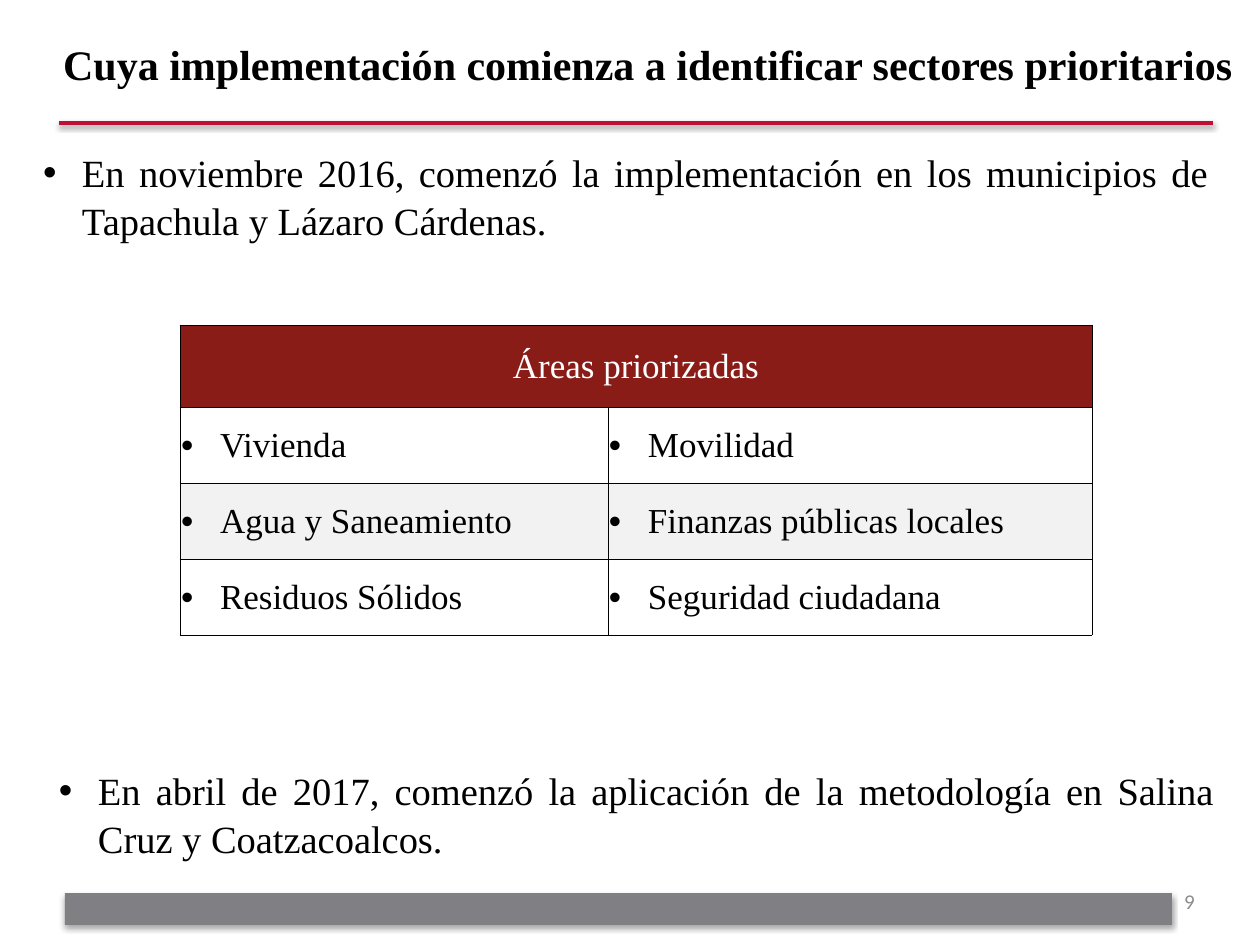
from lxml import etree
from pptx import Presentation
from pptx import util as u
from pptx.dml.color import RGBColor
from pptx.enum import shapes, text
from pptx.oxml import parse_xml
from pptx.oxml.ns import nsdecls, qn

PX = 914400 / 126
C = {"black": "000000", "white": "FFFFFF", "red": "BE0F34", "maroon": "8A1C18",
     "band": "F2F2F2", "gray": "807F83", "number": "8C8C8C"}
SERIF = "Times New Roman"
AL = text.PP_ALIGN


def px(*values):
    return [u.Emu(round(v * PX)) for v in values]


def write(tf, words, size, align, font=SERIF, color="black", bold=False, bullet=False):
    p = tf.paragraphs[0]
    p.alignment = align
    r = p.add_run()
    r.text = words
    for key, value in {"name": font, "size": u.Pt(size), "bold": bold}.items():
        setattr(r.font, key, value)
    r.font.color.rgb = RGBColor.from_string(C[color])
    if bullet:
        pPr = p._p.get_or_add_pPr()
        indent = px(39)[0]
        pPr.set("marL", str(indent))
        pPr.set("indent", str(-indent))
        etree.SubElement(pPr, qn("a:buFont")).set("typeface", "Arial")
        etree.SubElement(pPr, qn("a:buChar")).set("char", "•")
    return p


prs = Presentation()
prs.slide_width, prs.slide_height = px(1260, 945)
s = prs.slides.add_slide(prs.slide_layouts[6])

bullets = [
    ((43, 147, 1165, 571), "En noviembre 2016, comenzó la implementación en los municipios de Tapachula y Lázaro Cárdenas."),
    ((59, 765, 1155, 67), "En abril de 2017, comenzó la aplicación de la metodología en Salina Cruz y Coatzacoalcos."),
]
for box, words in bullets:
    tf = s.shapes.add_textbox(*px(*box)).text_frame
    tf.word_wrap = True
    for side in ("left", "top", "right", "bottom"):
        setattr(tf, f"margin_{side}", 0)
    p = write(tf, words, 22, AL.JUSTIFY, bullet=True)
    p.line_spacing = 1.04
    p.space_before = u.Pt(2)

rule = s.shapes.add_connector(shapes.MSO_CONNECTOR.STRAIGHT, *px(59, 123, 1213, 123))
rule.line.color.rgb = RGBColor.from_string(C["red"])
rule.line.width = u.Pt(2)

bar = s.shapes.add_shape(shapes.MSO_SHAPE.RECTANGLE, *px(65, 893, 1107, 32))
bar.fill.solid()
bar.fill.fore_color.rgb = RGBColor.from_string(C["gray"])
bar.line.fill.background()

for sp, distance, alpha in ((rule, 1.6, 38), (bar, 1.8, 35)):
    sp._element.spPr.append(parse_xml(
        f'<a:effectLst {nsdecls("a")}><a:outerShdw blurRad="{u.Pt(3.1)}" dist="{u.Pt(distance)}" '
        f'dir="5400000" rotWithShape="0"><a:srgbClr val="{C["black"]}">'
        f'<a:alpha val="{alpha * 1000}"/></a:srgbClr></a:outerShdw></a:effectLst>'))

labels = [
    ((30, 32, 1215, 63), "Cuya implementación comienza a identificar sectores prioritarios",
     {"size": 24, "bold": True}),
    ((914, 876, 293, 50), "9", {"size": 12, "font": "Calibri", "color": "number"}),
]
for box, words, style in labels:
    tf = s.shapes.add_textbox(*px(*box)).text_frame
    tf.word_wrap = True
    tf.vertical_anchor = text.MSO_ANCHOR.MIDDLE
    write(tf, words, align=AL.RIGHT, **style)

rows = [
    ("Áreas priorizadas", ""),
    ("Vivienda", "Movilidad"),
    ("Agua y Saneamiento", "Finanzas públicas locales"),
    ("Residuos Sólidos", "Seguridad ciudadana"),
]
fills = ["maroon", None, "band", None]
widths, heights = [428, 484], [82, 76, 76, 76]
table = s.shapes.add_table(4, 2, *px(180, 325, sum(widths), sum(heights))).table
for column, width in zip(table.columns, px(*widths)):
    column.width = width
for row, height in zip(table.rows, px(*heights)):
    row.height = height
table.cell(0, 0).merge(table.cell(0, 1))

for i, (names, fill) in enumerate(zip(rows, fills)):
    for j, name in enumerate(names):
        cell = table.cell(i, j)
        cell.vertical_anchor = text.MSO_ANCHOR.MIDDLE
        for side, margin in zip(("left", "top", "right", "bottom"), px(1, 1, 1, 0)):
            setattr(cell, f"margin_{side}", margin)
        if fill:
            cell.fill.solid()
            cell.fill.fore_color.rgb = RGBColor.from_string(C[fill])
        else:
            cell.fill.background()
        tcPr = cell._tc.get_or_add_tcPr()
        for k, edge in enumerate(("lnL", "lnR", "lnT", "lnB")):
            tcPr.insert(k, parse_xml(
                f'<a:{edge} {nsdecls("a")} w="{u.Pt(0.5)}"><a:solidFill>'
                f'<a:srgbClr val="{C["black"]}"/></a:solidFill></a:{edge}>'))
        if name:
            write(cell.text_frame, name, 20, AL.JUSTIFY if i else AL.CENTER,
                  color="black" if i else "white", bullet=i > 0)

prs.save("out.pptx")
